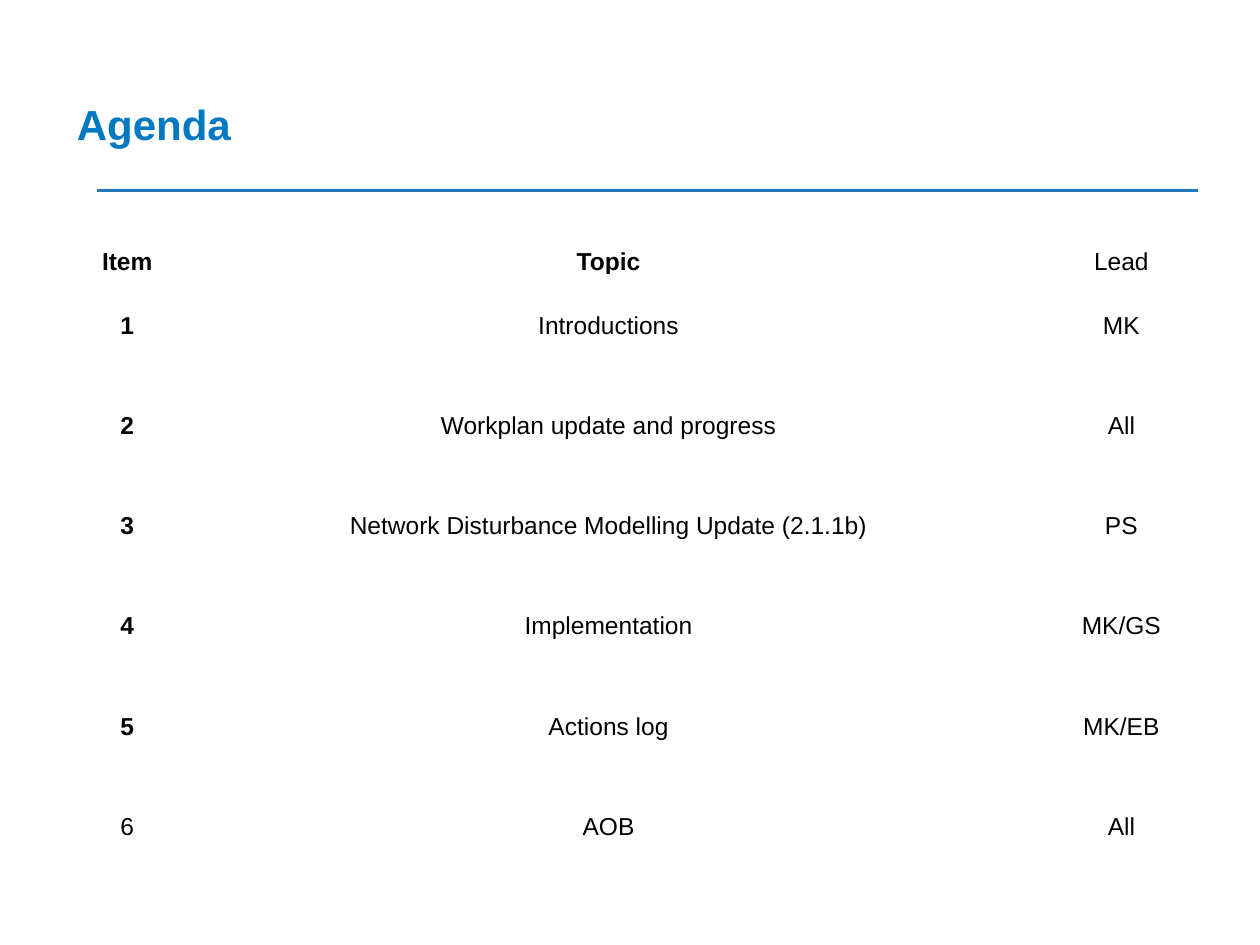
from lxml.etree import SubElement
from pptx import Presentation
from pptx.dml.color import RGBColor
from pptx.enum.shapes import MSO_CONNECTOR
from pptx.enum.text import MSO_ANCHOR, PP_ALIGN
from pptx.oxml.ns import qn
from pptx.util import Inches, Pt


def color(hex_string):
    return RGBColor.from_string(hex_string)


class SlideBuilder:
    title_font = {"name": "Arial", "size": Pt(24), "bold": True}
    cell_font = {"name": "Arial", "size": Pt(14)}
    cell_format = {
        "margin_left": Inches(0.07),
        "margin_right": Inches(0.07),
        "margin_top": 0,
        "margin_bottom": 0,
    }
    title_color = "0079C1"
    rule_color = "2478C0"
    text_color = "000000"
    background = "FFFFFF"

    def __init__(self, presentation):
        self.slide = presentation.slides.add_slide(presentation.slide_layouts[5])

    def apply(self, target, values):
        for name, value in values.items():
            setattr(target, name, value)

    def style_paragraph(self, paragraph, alignment, font, hex_string):
        paragraph.alignment = alignment
        self.apply(paragraph.font, font)
        paragraph.font.color.rgb = color(hex_string)

    def title(self, text, left, top, width, height):
        shape = self.slide.shapes.title
        self.apply(shape, {"left": left, "top": top, "width": width, "height": height})
        shape.text_frame.text = text
        shape.text_frame.vertical_anchor = MSO_ANCHOR.BOTTOM
        self.style_paragraph(shape.text_frame.paragraphs[0], PP_ALIGN.LEFT,
                             self.title_font, self.title_color)

    def rule(self, left, right, top):
        connector = self.slide.shapes.add_connector(
            MSO_CONNECTOR.STRAIGHT, left, top, right, top)
        connector.line.color.rgb = color(self.rule_color)
        connector.line.width = Pt(1.5)
        SubElement(connector._element.spPr, qn("a:effectLst"))

    def borders(self, cell, widths):
        properties = cell._tc.get_or_add_tcPr()
        for side, width in zip("LRTB", widths):
            line = SubElement(properties, qn(f"a:ln{side}"), w=str(Pt(width)))
            fill = SubElement(line, qn("a:solidFill"))
            SubElement(fill, qn("a:srgbClr"), val=self.background)

    def cell(self, cell, text, bold, anchor, border_widths):
        self.borders(cell, border_widths)
        cell.fill.solid()
        cell.fill.fore_color.rgb = color(self.background)
        self.apply(cell, self.cell_format)
        cell.vertical_anchor = anchor
        cell.text = text
        self.style_paragraph(cell.text_frame.paragraphs[0], PP_ALIGN.CENTER,
                             {**self.cell_font, "bold": bold}, self.text_color)

    def agenda(self, rows, left, top, column_widths, header_height, row_height):
        height = header_height + row_height * (len(rows) - 1)
        table = self.slide.shapes.add_table(
            len(rows), len(column_widths), left, top, sum(column_widths), height).table
        for column, width in zip(table.columns, column_widths):
            column.width = width
        for row_index, values in enumerate(rows):
            is_header = row_index == 0
            is_last = row_index == len(rows) - 1
            table.rows[row_index].height = header_height if is_header else row_height
            anchor = MSO_ANCHOR.TOP if is_header else MSO_ANCHOR.MIDDLE
            widths = (1, 1, 3 if row_index == 1 or is_last else 1, 3 if is_header else 1)
            for column_index, text in enumerate(values):
                bold = column_index < 2 if is_header else column_index == 0 and not is_last
                self.cell(table.cell(row_index, column_index), text, bold, anchor, widths)


def main():
    presentation = Presentation()
    presentation.slide_width = Inches(10)
    presentation.slide_height = Inches(7.5)
    builder = SlideBuilder(presentation)
    builder.rule(Inches(0.77), Inches(9.51), Inches(1.51))
    builder.title("Agenda", Inches(0.51), Inches(0.73), Inches(9), Inches(0.5))
    topics = [
        ("Introductions", "MK"),
        ("Workplan update and progress", "All"),
        ("Network Disturbance Modelling Update (2.1.1b)", "PS"),
        ("Implementation", "MK/GS"),
        ("Actions log", "MK/EB"),
        ("AOB", "All"),
    ]
    rows = [("Item", "Topic", "Lead")]
    rows += [(str(number), topic, lead) for number, (topic, lead) in enumerate(topics, 1)]
    builder.agenda(rows, Inches(0.67), Inches(1.97),
                   [Inches(0.68), Inches(6.96), Inches(1.18)],
                   Inches(0.22), Inches(4.77 / len(topics)))
    presentation.save("out.pptx")


if __name__ == "__main__":
    main()
